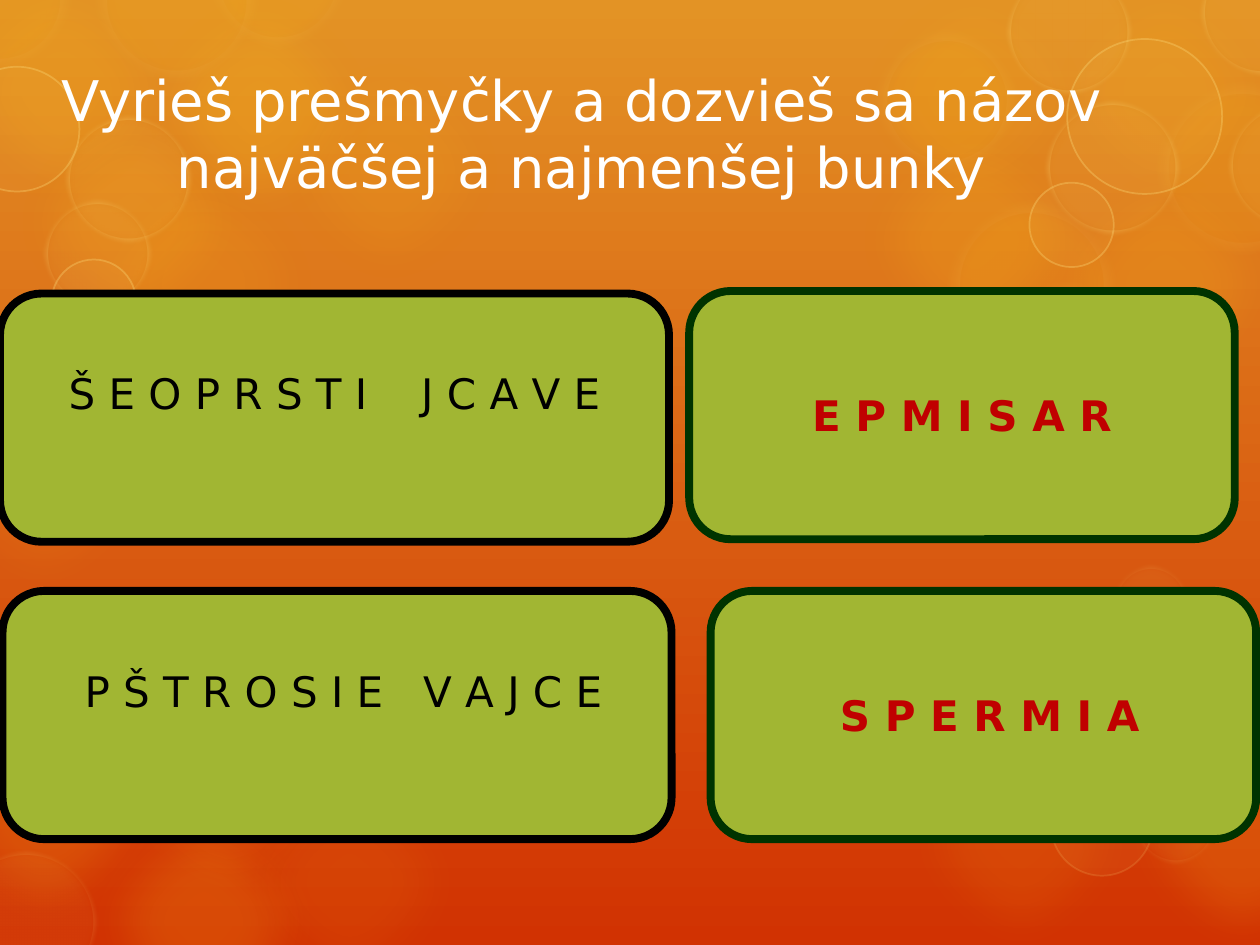
from dataclasses import dataclass

from lxml.etree import SubElement
from pptx import Presentation
from pptx.dml.color import RGBColor as RGB
from pptx.enum.shapes import MSO_SHAPE as SHAPE
from pptx.enum.text import MSO_ANCHOR as ANCHOR, PP_ALIGN as ALIGN
from pptx.oxml.ns import qn
from pptx.util import Inches, Pt


@dataclass(frozen=True)
class Theme:
    font: str = "DejaVu Sans"
    title_size: int = 32
    card_size: int = 24
    border: float = 4.5
    sky: str = "E39325"
    ember: str = "D13202"
    gold: str = "FDC61B"
    cream: str = "FEEBAE"
    pale: str = "FFE281"
    card: str = "A1B633"
    white: str = "FFFFFF"
    black: str = "000000"
    forest: str = "003300"
    red: str = "C00000"


theme = Theme()
presentation = Presentation()
presentation.slide_width, presentation.slide_height = Inches(10), Inches(7.5)
slide = presentation.slides.add_slide(presentation.slide_layouts[6])

background = slide.background.fill
background.gradient()
background.gradient_angle = 270
for stop, color in zip(background.gradient_stops, (theme.sky, theme.ember)):
    stop.color.rgb = RGB.from_string(color)


def add_bubble(x, y, size, fill, opacity, line=None, width=0, line_opacity=0, blur=0):
    shape = slide.shapes.add_shape(
        SHAPE.OVAL, Inches(x), Inches(y), Inches(size), Inches(size))
    shape.shadow.inherit = False
    shape.fill.solid()
    shape.fill.fore_color.rgb = RGB.from_string(fill)
    if line:
        shape.line.color.rgb = RGB.from_string(line)
        shape.line.width = Pt(width)
    else:
        shape.line.fill.background()
    properties = shape._element.spPr
    for color, percent in zip(properties.iter(qn("a:srgbClr")), (opacity, line_opacity)):
        SubElement(color, qn("a:alpha"), val=str(percent * 1000))
    if blur:
        effects = properties.find(qn("a:effectLst"))
        SubElement(effects, qn("a:softEdge"), rad=str(Pt(blur)))


glows = [
    (-0.26, 4.42, 8), (0.57, 1.2, 10), (2.05, 0.31, 10), (0.57, 6.27, 16),
    (-0.56, -0.32, 14), (1.01, -0.18, 20), (0, 0.72, 15), (8.2, -0.32, 10),
    (6.69, -0.29, 10), (8.2, 1.2, 15), (8.81, 5.62, 16), (7.29, 4.77, 5),
    (-0.69, 5.41, 16), (0.77, 5.24, 8), (6.69, 0.86, 15), (7.06, 5.62, 10),
    (1.73, 5.96, 8), (-0.7, 2.82, 8),
]
for x, y, opacity in glows:
    add_bubble(x, y, 2.09, theme.gold, opacity, blur=25)

halos = [
    (9.18, 0.65, 1.37), (6.94, 0.23, 1.14), (7.52, 1.59, 1.33), (7.89, 2.24, 1.14),
    (0.75, -0.65, 1.3), (1.64, -0.74, 1.13), (-0.57, -0.58, 1.14),
]
for x, y, size in halos:
    add_bubble(x, y, size, theme.gold, 10, theme.cream, 14, 6, blur=10)

sharp_rings = [
    (-0.36, 0.53, 0.99, 30), (0.41, 2.06, 0.67, 30), (8.47, 0.31, 1.23, 30),
    (8.17, 1.45, 0.67, 30), (8.34, 6.14, 0.81, 15),
]
soft_rings = [
    (-0.36, 6.75, 1.13, 15), (0.52, 0.92, 1, 30), (0.35, 1.59, 0.85, 30),
    (7.99, -0.24, 0.99, 30), (9.53, -0.39, 0.99, 30), (9.75, 0.82, 0.99, 30),
    (8.3, 0.8, 1.06, 30), (9, 6.2, 0.66, 15), (8.83, 4.48, 0.61, 15),
]
for rings, width, blur in ((sharp_rings, 1, 0), (soft_rings, 5, 4)):
    for x, y, size, line_opacity in rings:
        add_bubble(x, y, size, theme.pale, 5, theme.pale, width, line_opacity, blur)


def write_words(shape, words, size, color, bold=False, gap=0):
    frame = shape.text_frame
    frame.word_wrap = True
    frame.vertical_anchor = ANCHOR.MIDDLE
    paragraph = frame.paragraphs[0]
    paragraph.alignment = ALIGN.CENTER
    paragraph.font.name = theme.font
    paragraph.font.size = Pt(size)
    paragraph.font.bold = bold
    paragraph.font.color.rgb = RGB.from_string(color)
    for index, word in enumerate(words):
        if index:
            space = paragraph.add_run()
            space.text = " "
            space.font._element.set("spc", str(gap * 100))
        paragraph.add_run().text = word
    return frame


title = slide.shapes.add_textbox(Inches(0.35), Inches(0.36), Inches(8.54), Inches(1.39))
write_words(title, ["Vyrieš prešmyčky a dozvieš sa názov najväčšej a najmenšej bunky"],
            theme.title_size, theme.white)

egg = (5.31, theme.black, theme.black, False, 0.44)
sperm = (4.33, theme.forest, theme.red, True, 0.05)
cards = [
    (0, 2.33, egg, ["Š E O P R S T I", "J C A V E"], 23, 0.1),
    (5.47, 2.31, sperm, ["E P M I S A R"], 0, 0.1),
    (0.02, 4.69, egg, ["P Š T R O S I E", "V A J C E"], 15, 0.2),
    (5.64, 4.69, sperm, ["S P E R M I A"], 0, 0.2),
]
for x, y, (width, border, ink, bold, bottom), words, gap, indent in cards:
    card = slide.shapes.add_shape(
        SHAPE.ROUNDED_RECTANGLE, Inches(x), Inches(y), Inches(width), Inches(1.97))
    card.shadow.inherit = False
    card.fill.solid()
    card.fill.fore_color.rgb = RGB.from_string(theme.card)
    card.line.color.rgb = RGB.from_string(border)
    card.line.width = Pt(theme.border)
    frame = write_words(card, words, theme.card_size, ink, bold, gap)
    frame.margin_left, frame.margin_bottom = Inches(indent), Inches(bottom)

presentation.save("out.pptx")
